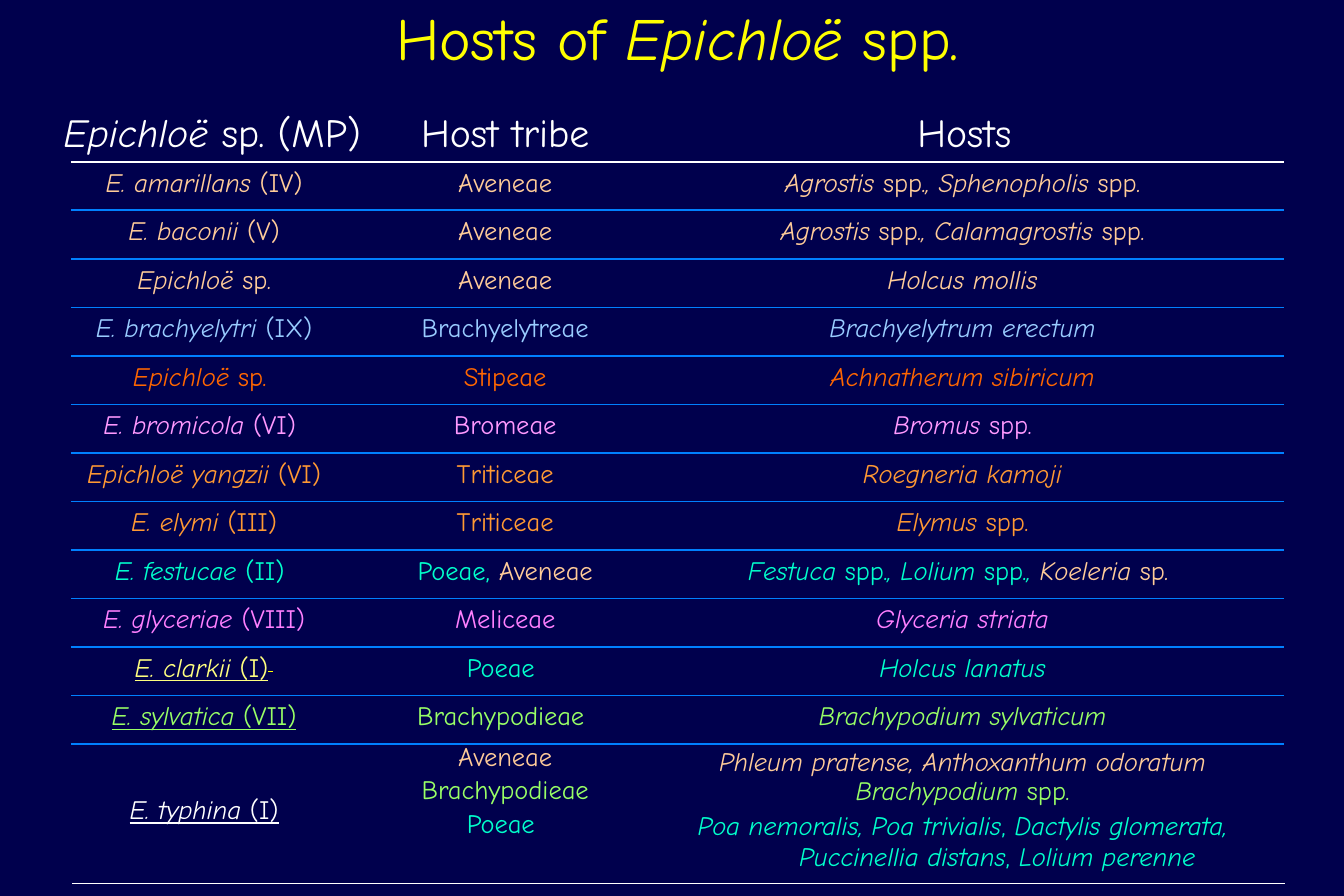
from lxml import etree
from pptx import Presentation
from pptx import util as u
from pptx.dml.color import RGBColor
from pptx.enum import shapes, text
from pptx.oxml.ns import qn

PX = 9525
FONT = "Comic Neue"
NO_STYLE = "{2D5ABB26-0587-4C30-8999-92F81FD0307C}"
COLORS = {
    "navy": "00004D", "yellow": "FFFF00", "white": "FFFFFF", "blue": "0080FF",
    "peach": "FFCC99", "sky": "99CCFF", "red": "FF6600", "lilac": "FF99FF",
    "orange": "FF9933", "aqua": "00FFCC", "pink": "FF80FF", "cream": "FFFF7F",
    "lime": "99FF66",
}

# Asterisks switch italics, ~name~ switches colour, a new line is a paragraph.
HEADER = ("white", "*Epichloë *sp. (MP)", "Host tribe", "Hosts")
ROWS = [
    ("peach", "*E. amarillans *(IV)", "Aveneae", "*Agrostis* spp.*, Sphenopholis* spp."),
    ("peach", "*E. baconii* (V)", "Aveneae", "*Agrostis *spp.*, Calamagrostis *spp."),
    ("peach", "*Epichloë *sp.", "Aveneae", "*Holcus mollis*"),
    ("sky", "*E. brachyelytri *(IX)", "Brachyelytreae", "*Brachyelytrum erectum*"),
    ("red", "*Epichloë *sp. ", "Stipeae", "*Achnatherum sibiricum*"),
    ("lilac", "*E. bromicola* (VI) ", "Bromeae", "*Bromus *spp."),
    ("orange", "*Epichloë yangzii* (VI)", "Triticeae", "*Roegneria kamoji*"),
    ("orange", "*E. elymi* (III)", "Triticeae", "*Elymus *spp."),
    ("aqua", "*E. festucae* (II) ", "Poeae, ~peach~Aveneae",
     "*Festuca *spp.*, Lolium *spp.*, ~peach~Koeleria *sp. "),
    ("pink", "*E. glyceriae *(VIII)", "Meliceae", "*Glyceria striata*"),
    ("aqua", "~cream~*E. clarkii* (I)", "Poeae ", "*Holcus lanatus*"),
    ("lime", "*E. sylvatica *(VII)", "Brachypodieae ", "*Brachypodium sylvaticum*"),
    ("white", "*E. typhina* (I)", "~peach~Aveneae\n~lime~Brachypodieae\n~aqua~Poeae ",
     "~peach~*Phleum pratense, Anthoxanthum odoratum*\n~lime~*Brachypodium *spp.\n"
     "~aqua~*Poa nemoralis, Poa trivialis*, *Dactylis glomerata, "
     "Puccinellia distans*, *Lolium perenne*"),
]
UNDERLINED_FROM = 10
COLUMNS = [256, 198, 527]
HEADER_MARGINS = [(0, 0), (0, 0), (13, 0)]
MARGINS = [(0, 30), (0, 0), (10, 0)]
ROW_H, LAST_H = 39, 112
RULE_INSET = 6
TRIBE_SPACING, HOST_SPACING = (0.7, 0.9, 0.9), (0.9, 0.7, 1.0)


def px(n):
    return u.Emu(n * PX)


def rgb(name):
    return RGBColor.from_string(COLORS[name])


def add_run(p, content, color, size, italic=False, underline=False):
    r = p.add_run()
    r.text = content
    r.font.name, r.font.size = FONT, u.Pt(size)
    r.font.italic = italic
    if underline:
        r.font.underline = True
    r.font.color.rgb = rgb(color)
    return r


def add_marked_text(p, marked, color, size, underline=False):
    italic = False
    for i, piece in enumerate(marked.split("~")):
        if i % 2:
            color = piece
            continue
        for j, part in enumerate(piece.split("*")):
            italic = italic != (j > 0)
            if part:
                add_run(p, part, color, size, italic, underline)


def fill_cell(cell, marked, color, size, margins, spacing=(0.7,), underline=False):
    cell.fill.background()
    cell.margin_left, cell.margin_right = map(px, margins)
    cell.margin_top = cell.margin_bottom = px(5)
    several = "\n" in marked
    cell.vertical_anchor = text.MSO_ANCHOR.TOP if several else text.MSO_ANCHOR.MIDDLE
    tf = cell.text_frame
    for i, line in enumerate(marked.split("\n")):
        p = tf.add_paragraph() if i else tf.paragraphs[0]
        p.alignment = text.PP_ALIGN.CENTER
        p.line_spacing = spacing[i]
        if i:
            p.space_before = u.Pt(size / 4)
        if several:
            pPr = p._p.get_or_add_pPr()
            pPr.set("marL", str(px(56)))
            pPr.set("indent", str(px(-56)))
        add_marked_text(p, line, color, size, underline)


def add_title(s, x, y, w, h):
    sp = s.shapes.title
    sp.left, sp.top, sp.width, sp.height = map(px, (x, y, w, h))
    tf = sp.text_frame
    tf.word_wrap = False
    tf.margin_top = 0
    tf.vertical_anchor = text.MSO_ANCHOR.MIDDLE
    p = tf.paragraphs[0]
    p.alignment = text.PP_ALIGN.CENTER
    add_marked_text(p, "Hosts of *Epichloë *spp.", "yellow", 36)


def add_host_table(s, x, y):
    height = ROW_H * len(ROWS) + LAST_H
    frame = s.shapes.add_table(len(ROWS) + 1, len(COLUMNS), px(x), px(y),
                               px(sum(COLUMNS)), px(height))
    table = frame.table
    table.first_row = table.horz_banding = False
    table._tbl.tblPr.find(qn("a:tableStyleId")).text = NO_STYLE
    for column, width in zip(table.columns, COLUMNS):
        column.width = px(width)
    for row in table.rows:
        row.height = px(ROW_H)
    table.rows[len(ROWS)].height = px(LAST_H)

    for c, marked in enumerate(HEADER[1:]):
        fill_cell(table.cell(0, c), marked, HEADER[0], 24, HEADER_MARGINS[c])
    table.cell(0, 0).text_frame.paragraphs[0].alignment = text.PP_ALIGN.LEFT

    spacings = [(0.7,), TRIBE_SPACING, HOST_SPACING]
    for i, (color, *cells) in enumerate(ROWS):
        last = i == len(ROWS) - 1
        for c, marked in enumerate(cells):
            fill_cell(table.cell(i + 1, c), marked, color, 16, MARGINS[c],
                      spacings[c] if last else (0.7,),
                      c == 0 and i >= UNDERLINED_FROM)

    clarkii = table.cell(UNDERLINED_FROM + 1, 0).text_frame.paragraphs[0]
    mark = add_run(clarkii, " ", "yellow", 16, True, True)
    mark.font._element.set("baseline", "30000")


def add_rule(s, x1, x2, y, color):
    cn = s.shapes.add_connector(shapes.MSO_CONNECTOR.STRAIGHT,
                                px(x1), px(y), px(x2), px(y))
    cn.line.color.rgb = rgb(color)
    cn.line.width = u.Pt(1)
    etree.SubElement(cn._element.spPr, qn("a:effectLst"))


def add_row_rules(s, x, y):
    """Rule off the header and every row of the table placed at x, y."""
    left, right = x + RULE_INSET, x + sum(COLUMNS)
    for i in range(len(ROWS)):
        add_rule(s, left, right, y + ROW_H * (i + 1), "blue" if i else "white")
    add_rule(s, left + 1, right + 1, y + ROW_H * len(ROWS) + LAST_H, "white")


def main():
    prs = Presentation()
    prs.slide_width, prs.slide_height = px(1080), px(720)
    s = prs.slides.add_slide(prs.slide_layouts[5])
    s.background.fill.solid()
    s.background.fill.fore_color.rgb = rgb("navy")
    add_title(s, 284, 0, 521, 63)
    add_host_table(s, 51, 91)
    add_row_rules(s, 51, 91)
    prs.save("out.pptx")


if __name__ == "__main__":
    main()
